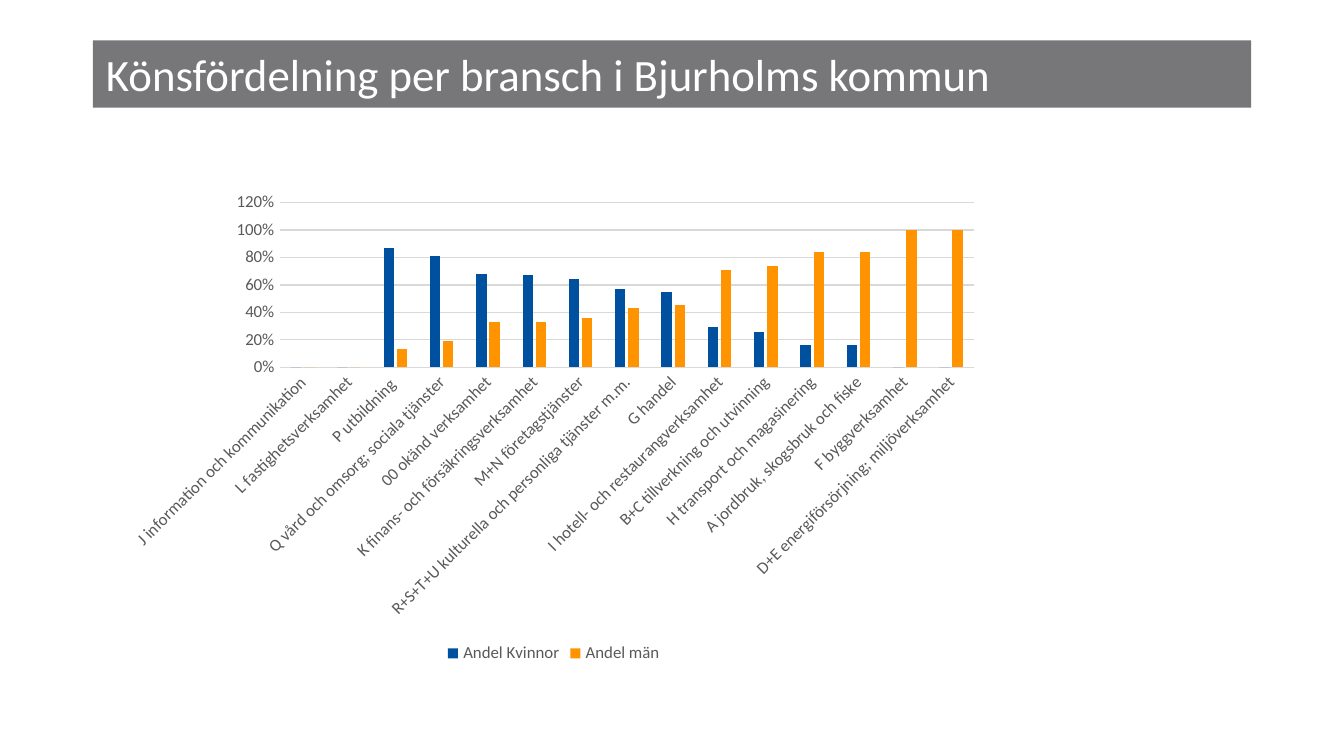
from typing import NamedTuple

from pptx import Presentation
from pptx.chart.data import CategoryChartData
from pptx.dml.color import RGBColor
from pptx.enum.chart import XL_CHART_TYPE as ChartType
from pptx.enum.chart import XL_LEGEND_POSITION as LegendPos
from pptx.enum.chart import XL_TICK_MARK as TickMark
from pptx.enum.shapes import MSO_SHAPE as Shape
from pptx.enum.text import MSO_ANCHOR as Anchor
from pptx.enum.text import PP_ALIGN as Align
from pptx.util import Inches, Pt

FONT = "Calibri"
COLORS = {
    "banner": "77777A",
    "title": "FFFFFF",
    "label": "595959",
    "grid": "D9D9D9",
    "women": "0050A0",
    "men": "FF9300",
}
SLIDE_W = Inches(10)
SLIDE_H = SLIDE_W * 9 // 16


class Box(NamedTuple):
    """A place on the slide, in shares of its width and height."""
    x: float
    y: float
    w: float
    h: float

    def emu(self) -> tuple[int, ...]:
        return tuple(round(share * size) for share, size in
                     zip(self, (SLIDE_W, SLIDE_H) * 2))


class Industry(NamedTuple):
    name: str
    women: float
    men: float


TITLE_BOX = Box(0.69 / 10, 0.3 / 5.62, 8.62 / 10, 0.5 / 5.62)
CHART_BOX = Box(0.86 / 10, 1.36 / 5.62, 6.52 / 10, 3.61 / 5.62)
SERIES_NAMES = {"women": "Andel Kvinnor", "men": "Andel män"}
INDUSTRIES = [
    Industry("J information och kommunikation", 0, 0),
    Industry("L fastighetsverksamhet", 0, 0),
    Industry("P utbildning ", 0.87, 0.13),
    Industry("Q vård och omsorg; sociala tjänster", 0.81, 0.19),
    Industry("00 okänd verksamhet", 0.68, 0.33),
    Industry("K finans- och försäkringsverksamhet", 0.67, 0.33),
    Industry("M+N företagstjänster", 0.64, 0.36),
    Industry("R+S+T+U kulturella och personliga tjänster m.m.", 0.57, 0.43),
    Industry("G handel", 0.55, 0.45),
    Industry("I hotell- och restaurangverksamhet", 0.29, 0.71),
    Industry("B+C tillverkning och utvinning", 0.26, 0.74),
    Industry("H transport och magasinering", 0.16, 0.84),
    Industry("A jordbruk, skogsbruk och fiske", 0.16, 0.84),
    Industry("F byggverksamhet", 0, 1),
    Industry("D+E energiförsörjning; miljöverksamhet", 0, 1),
]


def rgb(name: str) -> RGBColor:
    return RGBColor.from_string(COLORS[name])


def style_font(font, size: float, color: str) -> None:
    font.name = FONT
    font.size = Pt(size)
    font.bold = False
    font.color.rgb = rgb(color)


def style_line(line) -> None:
    line.color.rgb = rgb("grid")
    line.width = Pt(0.75)


def add_title(slide, text: str) -> None:
    sp = slide.shapes.add_shape(Shape.RECTANGLE, *TITLE_BOX.emu())
    sp.shadow.inherit = False
    sp.fill.solid()
    sp.fill.fore_color.rgb = rgb("banner")
    sp.line.fill.background()
    tf = sp.text_frame
    tf.word_wrap = True
    tf.vertical_anchor = Anchor.MIDDLE
    p = tf.paragraphs[0]
    p.text = text
    p.alignment = Align.LEFT
    style_font(p.font, 24, "title")


def style_axes(chart) -> None:
    cat, val = chart.category_axis, chart.value_axis
    for axis in (cat, val):
        axis.major_tick_mark = axis.minor_tick_mark = TickMark.NONE
        style_font(axis.tick_labels.font, 9, "label")
    style_line(cat.format.line)
    slanted = cat._element.txPr.bodyPr
    slanted.set("rot", str(-45 * 60000))
    slanted.set("vert", "horz")

    val.format.line.fill.background()
    style_line(val.major_gridlines.format.line)
    val.minimum_scale, val.maximum_scale, val.major_unit = 0, 1.2, 0.2
    val.tick_labels.number_format = "0%"
    val.tick_labels.number_format_is_linked = False


def add_gender_chart(slide) -> None:
    data = CategoryChartData(number_format="0%")
    data.categories = [industry.name for industry in INDUSTRIES]
    for key, name in SERIES_NAMES.items():
        data.add_series(name, [getattr(i, key) for i in INDUSTRIES])
    chart = slide.shapes.add_chart(
        ChartType.COLUMN_CLUSTERED, *CHART_BOX.emu(), data).chart
    chart.has_title = False
    chart.font.name, chart.font.size = FONT, Pt(10)

    plot = chart.plots[0]
    plot.vary_by_categories = False
    plot.gap_width, plot.overlap = 219, -27
    for key, series in zip(SERIES_NAMES, plot.series):
        series.format.fill.solid()
        series.format.fill.fore_color.rgb = rgb(key)
    style_axes(chart)

    chart.has_legend = True
    chart.legend.position = LegendPos.BOTTOM
    chart.legend.include_in_layout = False
    style_font(chart.legend.font, 9, "label")


def main() -> None:
    prs = Presentation()
    prs.slide_width, prs.slide_height = SLIDE_W, SLIDE_H
    slide = prs.slides.add_slide(prs.slide_layouts[6])
    add_title(slide, "Könsfördelning per bransch i Bjurholms kommun")
    add_gender_chart(slide)
    prs.save("out.pptx")


if __name__ == "__main__":
    main()
